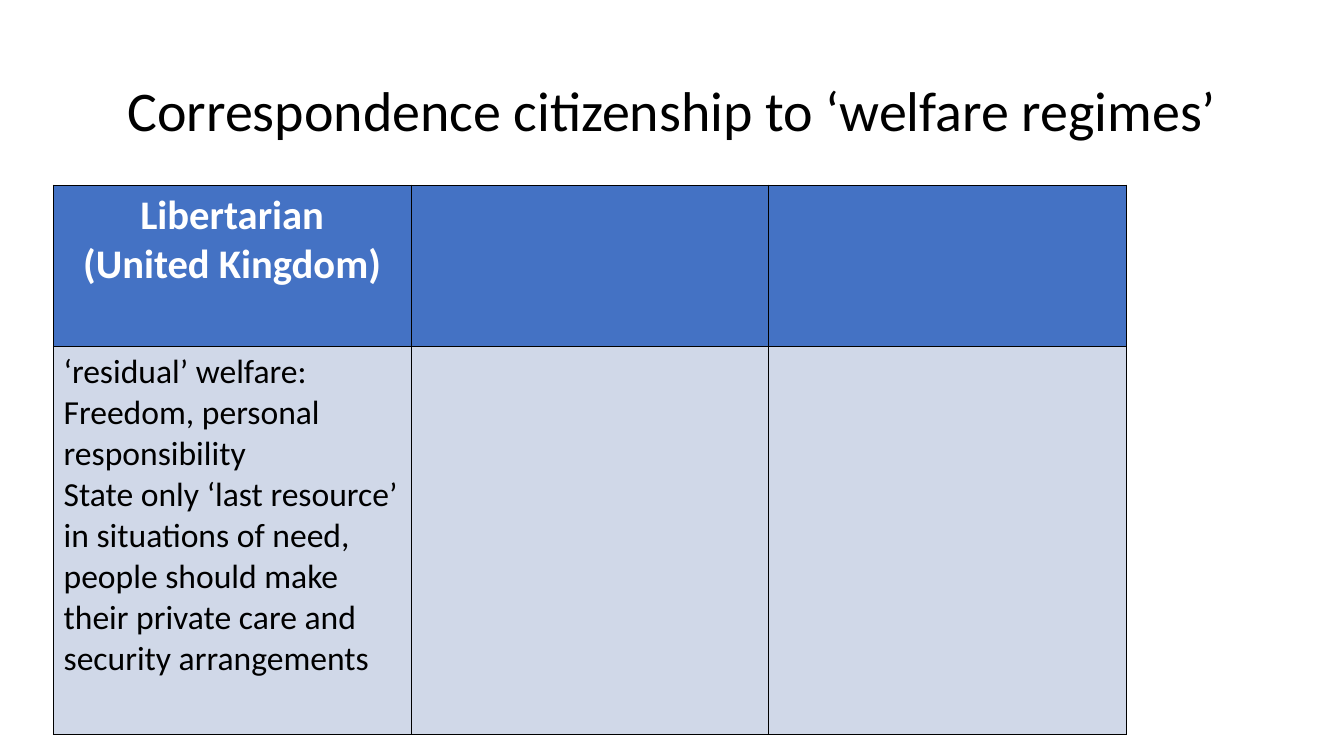
from lxml.etree import SubElement
from pptx import Presentation
from pptx.dml.color import RGBColor
from pptx.enum.text import MSO_ANCHOR as Anchor, PP_ALIGN as Align
from pptx.oxml.ns import qn
from pptx.util import Cm, Pt

# Content
TITLE = "Correspondence citizenship to ‘welfare regimes’"
REGIMES = [
    [["Libertarian", "(United Kingdom)"], [], []],
    [
        [
            "‘residual’ welfare:",
            "Freedom, personal responsibility",
            "State only ‘last resource’ in situations of need, "
            "people should make their private care and security arrangements",
        ],
        [],
        [],
    ],
]

# Formats
FONT = "Calibri"
TITLE_FORMAT = {"name": FONT, "size": Pt(40), "bold": False}
ROW_STYLES = [
    {"height": Cm(4.06), "fill": "4472C4", "color": "FFFFFF", "align": Align.CENTER,
     "font": {"name": FONT, "size": Pt(29), "bold": True}},
    {"height": Cm(9.78), "fill": "D0D8E8", "color": "000000", "align": Align.LEFT,
     "font": {"name": FONT, "size": Pt(24), "bold": False}},
]
COLUMN_WIDTH = Cm(9.01)
BORDER_COLOR = "000000"


def rgb(value):
    return RGBColor.from_string(value)


def format_paragraph(paragraph, font_format, color, align):
    paragraph.alignment = align
    for name, value in font_format.items():
        setattr(paragraph.font, name, value)
    paragraph.font.color.rgb = rgb(color)


def add_borders(cell):
    properties = cell._tc.get_or_add_tcPr()
    for side in ("lnL", "lnR", "lnT", "lnB"):
        line = SubElement(properties, qn(f"a:{side}"), w=str(Pt(1)))
        fill = SubElement(line, qn("a:solidFill"))
        SubElement(fill, qn("a:srgbClr"), val=BORDER_COLOR)


def fill_cell(cell, lines, style):
    add_borders(cell)
    cell.fill.solid()
    cell.fill.fore_color.rgb = rgb(style["fill"])
    if lines:
        cell.text_frame.text = "\n".join(lines)
    for paragraph in cell.text_frame.paragraphs:
        format_paragraph(paragraph, style["font"], style["color"], style["align"])


def main():
    presentation = Presentation()
    presentation.slide_width, presentation.slide_height = Cm(33.87), Cm(19.05)
    slide = presentation.slides.add_slide(presentation.slide_layouts[5])

    # Title
    title = slide.shapes.title
    title.left, title.top, title.width, title.height = Cm(2.33), Cm(1.01), Cm(29.21), Cm(3.68)
    title.text_frame.text = TITLE
    title.text_frame.vertical_anchor = Anchor.MIDDLE
    heading = title.text_frame.paragraphs[0]
    format_paragraph(heading, TITLE_FORMAT, "000000", Align.CENTER)
    heading.line_spacing = 0.9

    # Table of welfare regimes
    column_count = len(REGIMES[0])
    table = slide.shapes.add_table(
        len(REGIMES), column_count, Cm(1.35), Cm(4.67),
        COLUMN_WIDTH * column_count, sum(style["height"] for style in ROW_STYLES),
    ).table
    for column in table.columns:
        column.width = COLUMN_WIDTH
    for row, texts, style in zip(table.rows, REGIMES, ROW_STYLES):
        row.height = style["height"]
        for cell, lines in zip(row.cells, texts):
            fill_cell(cell, lines, style)

    presentation.save("out.pptx")


if __name__ == "__main__":
    main()
